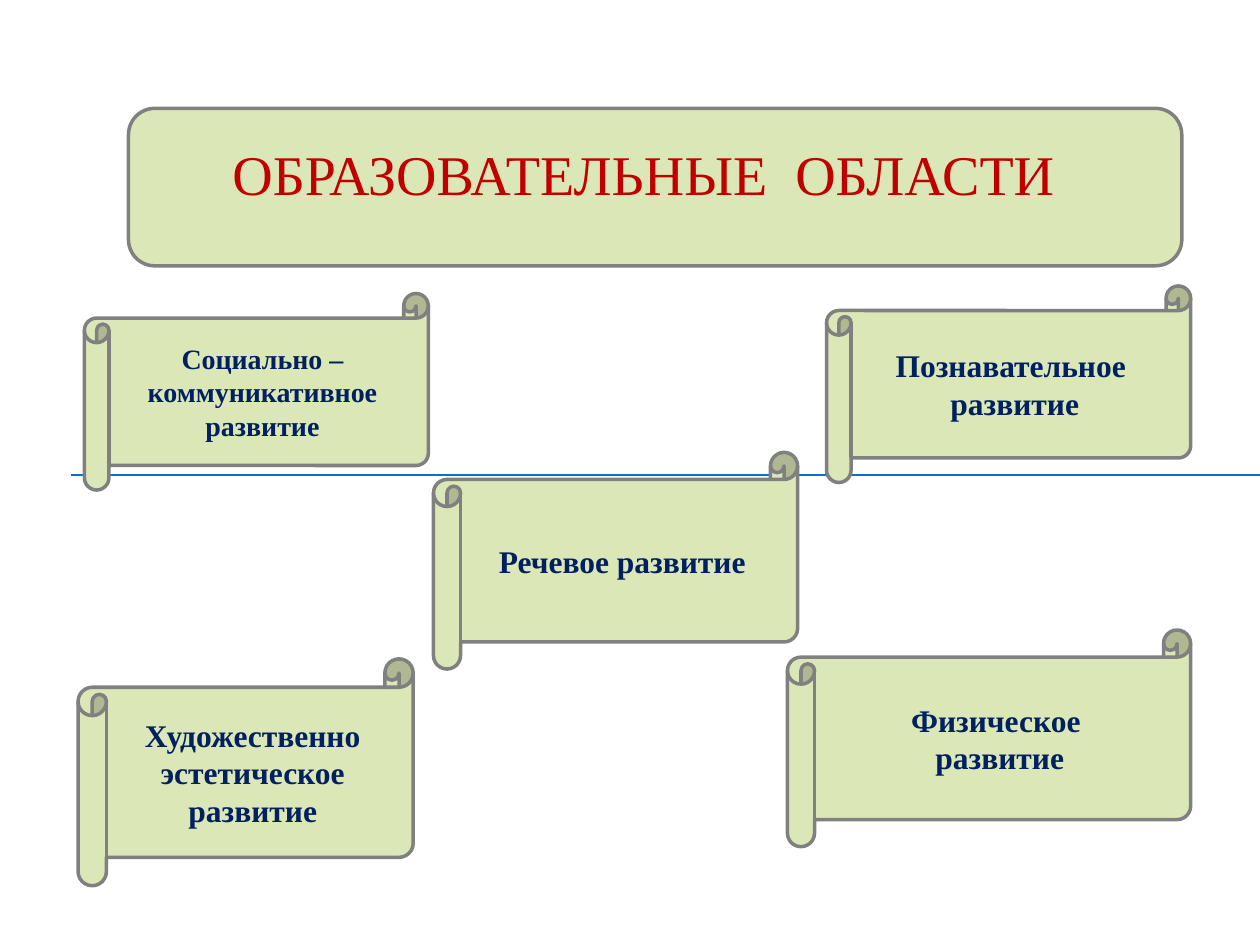
from lxml.etree import SubElement
from pptx import Presentation
from pptx.dml.color import RGBColor
from pptx.enum.shapes import MSO_CONNECTOR, MSO_SHAPE
from pptx.enum.text import MSO_ANCHOR, PP_ALIGN
from pptx.oxml.ns import qn
from pptx.util import Inches, Pt


def rgb(value):
    return RGBColor.from_string(value)


class SlideBuilder:
    FONT = "Times New Roman"
    PANEL, OUTLINE = "DBE7B6", "808080"
    RULE, HEADING, BODY = "0F6FC6", "C00000", "002060"

    def __init__(self, slide):
        self.slide = slide

    def rule(self, left, right, y):
        line = self.slide.shapes.add_connector(
            MSO_CONNECTOR.STRAIGHT, Inches(left), Inches(y), Inches(right), Inches(y))
        line.line.color.rgb = rgb(self.RULE)
        line.line.width = Pt(0.75)
        SubElement(line._element.spPr, qn("a:effectLst"))

    def panel(self, kind, box):
        sp = self.slide.shapes.add_shape(kind, *map(Inches, box))
        sp.shadow.inherit = False
        sp.fill.solid()
        sp.fill.fore_color.rgb = rgb(self.PANEL)
        sp.line.color.rgb = rgb(self.OUTLINE)
        sp.line.width = Pt(2)
        return sp

    def set_text(self, sp, lines, size, color, bold):
        tf = sp.text_frame
        tf.word_wrap = True
        tf.vertical_anchor = MSO_ANCHOR.MIDDLE
        tf.text = "\n".join(lines)
        for p in tf.paragraphs:
            p.alignment = PP_ALIGN.CENTER
            p.font.name = self.FONT
            p.font.size = Pt(size)
            p.font.bold = bold
            p.font.color.rgb = rgb(color)

    def title(self, box, text):
        sp = self.slide.shapes.add_textbox(*map(Inches, box))
        self.set_text(sp, [text], 32, self.HEADING, False)

    def scroll(self, box, lines, size=18):
        sp = self.panel(MSO_SHAPE.HORIZONTAL_SCROLL, box)
        self.set_text(sp, lines, size, self.BODY, True)


def main():
    prs = Presentation()
    prs.slide_width, prs.slide_height = Inches(10), Inches(7.5)
    s = SlideBuilder(prs.slides.add_slide(prs.slide_layouts[6]))

    # Background rule
    s.rule(0.56, 10, 3.77)

    # Heading
    s.panel(MSO_SHAPE.ROUNDED_RECTANGLE, (1.02, 0.86, 8.36, 1.25))
    s.title((1.25, 1.02, 7.83, 0.7), "ОБРАЗОВАТЕЛЬНЫЕ  ОБЛАСТИ ")

    # Educational areas
    s.scroll((0.67, 2.33, 2.73, 1.56),
             ["Социально –", "коммуникативное", "развитие"], size=16)
    s.scroll((3.44, 3.59, 2.89, 1.72), ["Речевое развитие"])
    s.scroll((0.62, 5.23, 2.66, 1.8),
             ["Художественно", " эстетическое ", "развитие"])
    s.scroll((6.25, 5, 3.2, 1.72), ["Физическое", " развитие"])
    s.scroll((6.56, 2.27, 2.89, 1.56), ["Познавательное ", "развитие"])

    prs.save("out.pptx")


if __name__ == "__main__":
    main()
